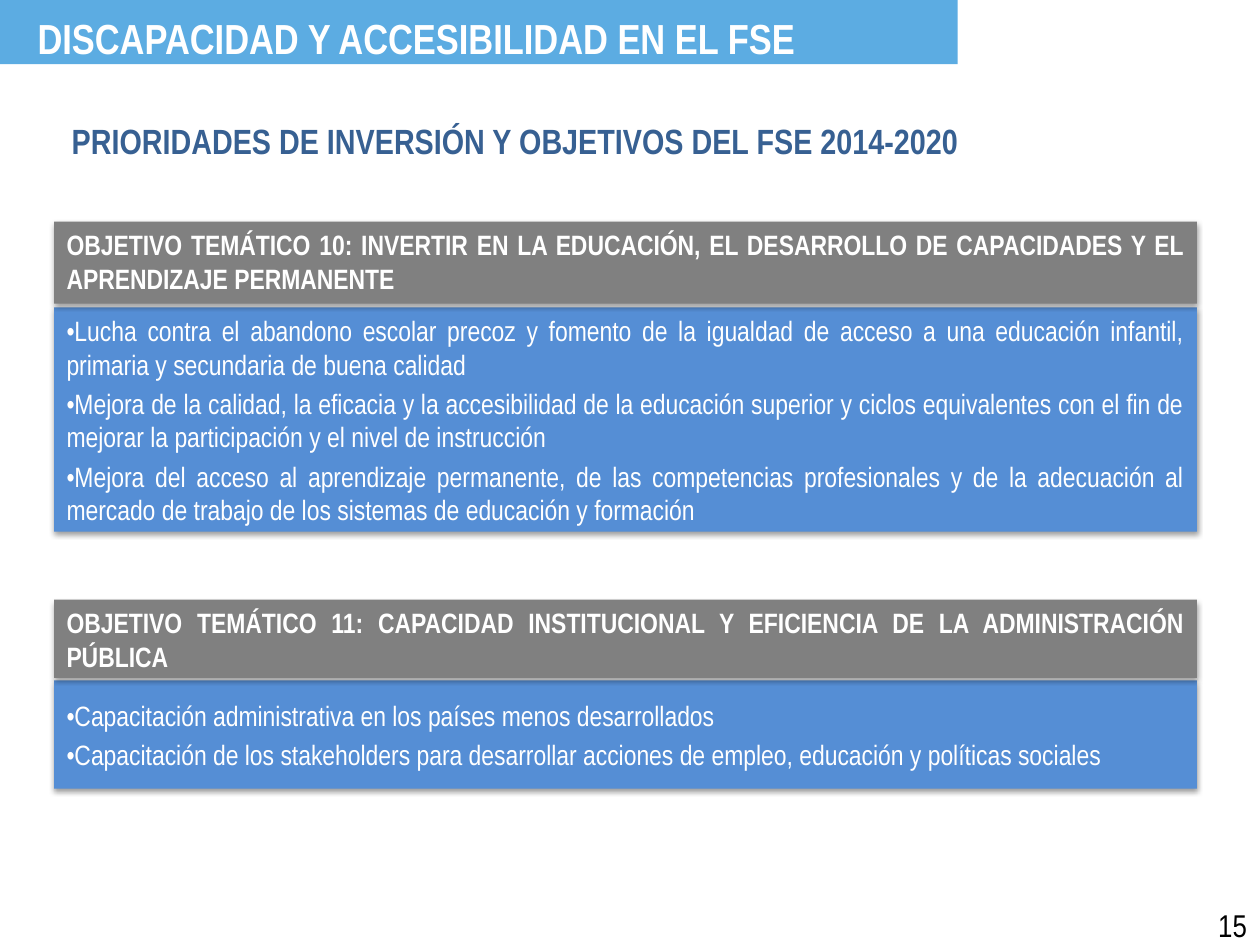
from lxml import etree
from pptx import Presentation
from pptx.dml.color import RGBColor
from pptx.enum.shapes import MSO_SHAPE as SHAPE
from pptx.enum.text import MSO_ANCHOR as ANCHOR, PP_ALIGN as ALIGN
from pptx.oxml.ns import qn
from pptx.util import Inches, Pt

COLORS = {"banner": "5CACE2", "header": "808080", "body": "558ED5",
          "heading": "376092", "white": "FFFFFF", "black": "000000"}
FONT = "Arial Narrow"
LEFT, WIDTH = 0.43, 9.07

# Each objective: header, header top and height, body top and height, anchor, points
OBJECTIVES = [
    ("OBJETIVO TEMÁTICO 10: INVERTIR EN LA EDUCACIÓN, EL DESARROLLO DE "
     "CAPACIDADES Y EL APRENDIZAJE PERMANENTE",
     (1.76, 0.65), (2.44, 1.78), ANCHOR.TOP,
     ["•Lucha contra el abandono escolar precoz y fomento de la igualdad de "
      "acceso a una educación infantil, primaria y secundaria de buena calidad",
      "•Mejora de la calidad, la eficacia y la accesibilidad de la educación "
      "superior y ciclos equivalentes con el fin de mejorar la participación y "
      "el nivel de instrucción",
      "•Mejora del acceso al aprendizaje permanente, de las competencias "
      "profesionales y de la adecuación al mercado de trabajo de los sistemas "
      "de educación y formación"]),
    ("OBJETIVO TEMÁTICO 11: CAPACIDAD INSTITUCIONAL Y EFICIENCIA DE LA "
     "ADMINISTRACIÓN PÚBLICA",
     (4.76, 0.62), (5.4, 0.86), ANCHOR.MIDDLE,
     ["•Capacitación administrativa en los países menos desarrollados",
      "•Capacitación de los stakeholders para desarrollar acciones de empleo, "
      "educación y políticas sociales"]),
]


def rgb(name):
    return RGBColor.from_string(COLORS[name])


def write(sp, lines, size, color, bold=False, anchor=ANCHOR.TOP, **para):
    """Fill a shape with paragraphs of one format."""
    tf = sp.text_frame
    tf.word_wrap = True
    tf.vertical_anchor = anchor
    para = {"alignment": ALIGN.JUSTIFY, "space_before": Pt(size * 0.2), **para}
    for i, line in enumerate(lines):
        p = tf.paragraphs[0] if i == 0 else tf.add_paragraph()
        for key, value in para.items():
            setattr(p, key, value)
        r = p.add_run()
        r.text = line
        for key, value in {"name": FONT, "size": Pt(size), "bold": bold}.items():
            setattr(r.font, key, value)
        r.font.color.rgb = rgb(color)


def add_text(s, box, line, size, color, **fmt):
    sp = s.shapes.add_textbox(*map(Inches, box))
    write(sp, [line], size, color, **fmt)


def add_rect(s, box, fill):
    sp = s.shapes.add_shape(SHAPE.RECTANGLE, *map(Inches, box))
    sp.shadow.inherit = False
    sp.fill.solid()
    sp.fill.fore_color.rgb = rgb(fill)
    sp.line.fill.background()
    return sp


def add_shadow(sp):
    """Soft shadow straight below the shape."""
    effects = sp._element.spPr.find(qn("a:effectLst"))
    shadow = etree.SubElement(effects, qn("a:outerShdw"), blurRad=str(Pt(3.1)),
                              dist=str(Pt(1.6)), dir="5400000", rotWithShape="0")
    color = etree.SubElement(shadow, qn("a:srgbClr"), val=COLORS["black"])
    etree.SubElement(color, qn("a:alpha"), val="38000")


def add_panel(s, span, fill, lines, **fmt):
    top, height = span
    sp = add_rect(s, (LEFT, top, WIDTH, height), fill)
    add_shadow(sp)
    write(sp, lines, 16, "white", **fmt)


def main():
    prs = Presentation()
    prs.slide_width, prs.slide_height = Inches(10), Inches(7.5)
    s = prs.slides.add_slide(prs.slide_layouts[6])

    # Banner and heading
    add_rect(s, (0, 0, 7.6, 0.51), "banner")
    add_text(s, (0.2, 0.05, 7, 0.37), "DISCAPACIDAD Y ACCESIBILIDAD EN EL FSE",
             24, "white", bold=True)
    add_text(s, (0.47, 0.94, 8.98, 0.4),
             "PRIORIDADES DE INVERSIÓN Y OBJETIVOS DEL FSE 2014-2020",
             20, "heading", bold=True, alignment=ALIGN.LEFT, line_spacing=0.9)

    # Objectives: body first, so the header's shadow falls on it
    for title, header, body, anchor, points in OBJECTIVES:
        add_panel(s, body, "body", points, anchor=anchor)
        add_panel(s, header, "header", [title], bold=True)

    # Page number
    add_text(s, (9.57, 7.14, 0.79, 0.4), "15", 18, "black",
             alignment=ALIGN.LEFT, space_before=Pt(0))

    prs.save("out.pptx")


if __name__ == "__main__":
    main()
